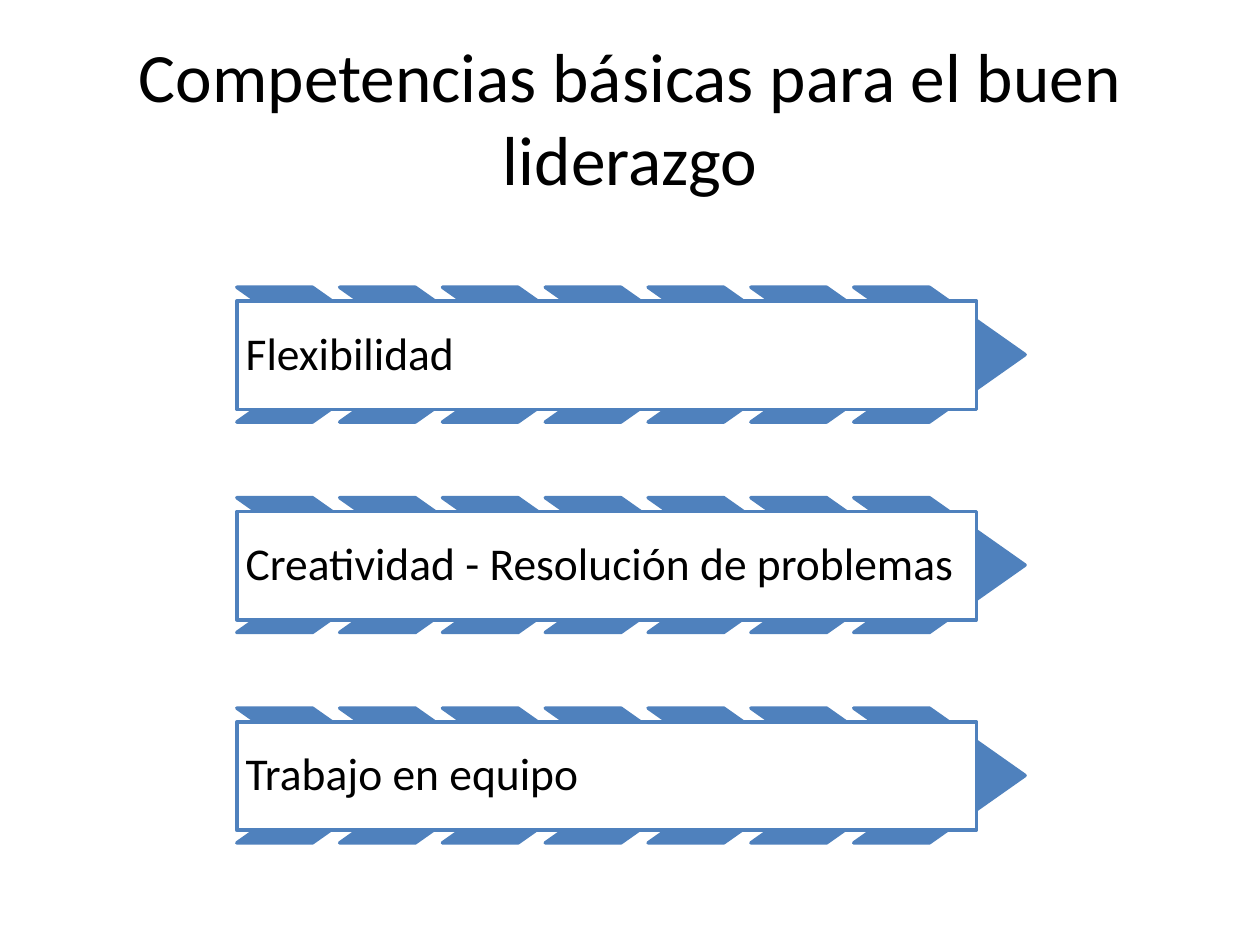
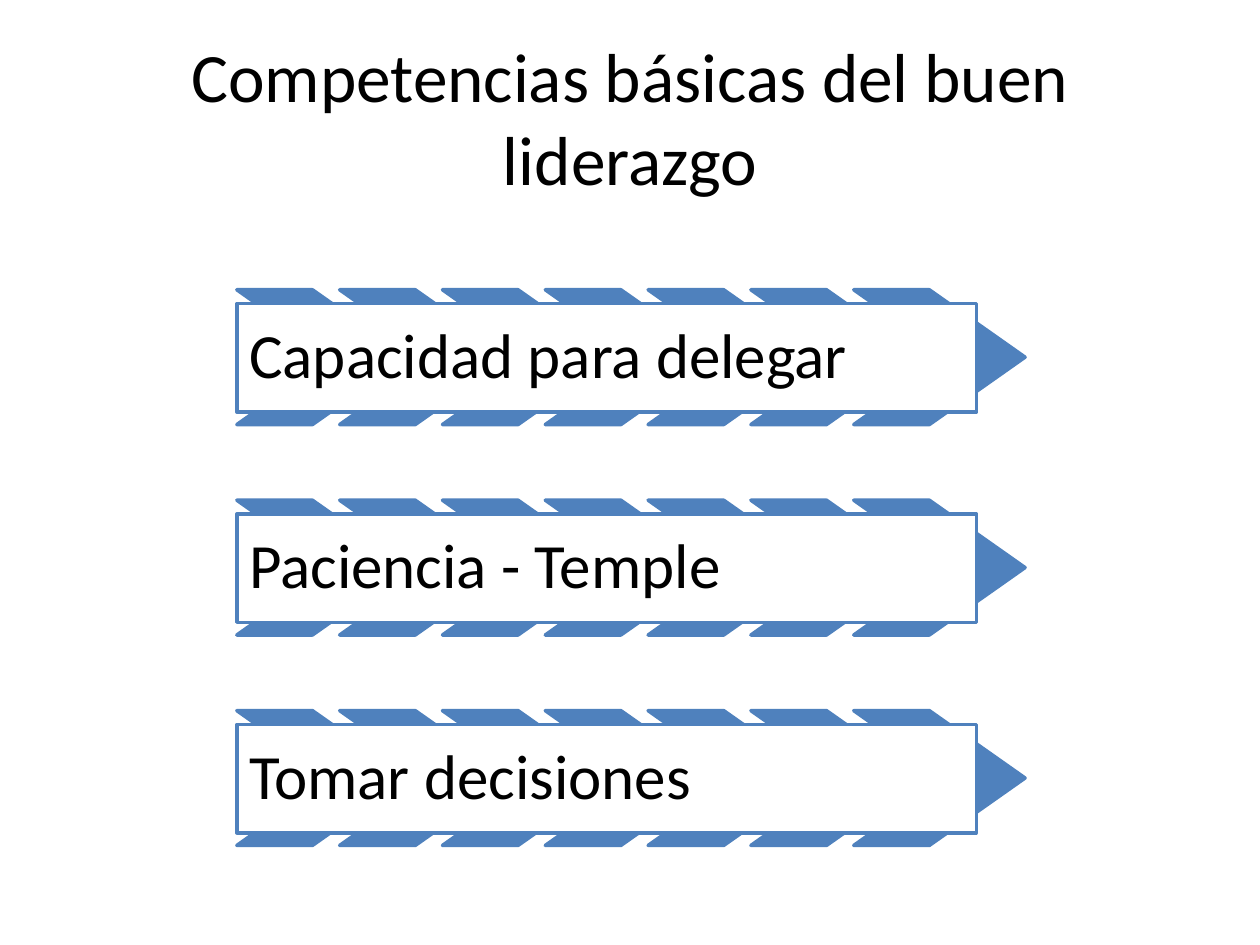
from dataclasses import dataclass

import pptx
import pptx.dml.color
import pptx.enum.shapes
import pptx.enum.text
import pptx.util

Inches = pptx.util.Inches
Pt = pptx.util.Pt
RGB = pptx.dml.color.RGBColor
SHAPE = pptx.enum.shapes.MSO_SHAPE
ALIGN = pptx.enum.text.PP_ALIGN
MIDDLE = pptx.enum.text.MSO_ANCHOR.MIDDLE


@dataclass(frozen=True)
class Theme:
    font: str = "Calibri"
    accent: RGB = RGB(0x4F, 0x81, 0xBD)
    paper: RGB = RGB(0xFF, 0xFF, 0xFF)
    ink: RGB = RGB(0, 0, 0)
    title_size: float = 39.6
    line_width: float = 2


class Deck:
    # Banner geometry, in inches
    LEFT = 1.88
    BANNER_PITCH = 1.67
    CHEVRONS = 7
    CHEVRON_W, CHEVRON_H = 1.36, 1.07
    CHEVRON_PITCH = CHEVRON_W * 0.6
    CHEVRON_ADJ = 0.71
    LABEL_W, LABEL_H = 5.87, 0.86
    LABEL_DROP = 0.11

    def __init__(self, theme):
        self.theme = theme
        self.prs = pptx.Presentation()
        self.prs.slide_width = Inches(10)
        self.prs.slide_height = Inches(7.5)
        self.slide = None

    def add_slide(self, title):
        self.slide = self.prs.slides.add_slide(self.prs.slide_layouts[5])
        sp = self.slide.shapes.title
        sp.left, sp.top = Inches(0.5), Inches(0.3)
        sp.width, sp.height = Inches(9), Inches(1.25)
        self.set_text(sp, title, self.theme.title_size, ALIGN.CENTER)

    def set_text(self, sp, text, size, align):
        tf = sp.text_frame
        tf.text = text
        tf.word_wrap = True
        tf.auto_size = pptx.enum.text.MSO_AUTO_SIZE.NONE
        tf.vertical_anchor = MIDDLE
        p = tf.paragraphs[0]
        p.alignment = align
        p.font.name = self.theme.font
        p.font.size = Pt(size)
        p.font.color.rgb = self.theme.ink
        return tf

    def shape(self, parent, kind, left, top, width, height, fill):
        sp = parent.shapes.add_shape(
            kind, Inches(left), Inches(top), Inches(width), Inches(height))
        sp.shadow.inherit = False
        sp.fill.solid()
        sp.fill.fore_color.rgb = fill
        sp.line.color.rgb = self.theme.accent
        sp.line.width = Pt(self.theme.line_width)
        return sp

    def banner(self, group, text, top, size, inset):
        # Row of chevrons behind the label
        for i in range(self.CHEVRONS):
            sp = self.shape(group, SHAPE.CHEVRON, self.LEFT + i * self.CHEVRON_PITCH,
                            top, self.CHEVRON_W, self.CHEVRON_H, self.theme.accent)
            sp.adjustments[0] = self.CHEVRON_ADJ
        # Label over the chevrons
        sp = self.shape(group, SHAPE.RECTANGLE, self.LEFT, top + self.LABEL_DROP,
                        self.LABEL_W, self.LABEL_H, self.theme.paper)
        tf = self.set_text(sp, text, size, ALIGN.LEFT)
        tf.margin_left = tf.margin_right = Inches(inset)
        tf.margin_top = tf.margin_bottom = Inches(inset)
        tf.paragraphs[0].line_spacing = 0.9

    def banners(self, labels, top, size, inset):
        group = self.slide.shapes.add_group_shape()
        for i, text in enumerate(labels):
            self.banner(group, text, top + i * self.BANNER_PITCH, size, inset)


def main():
    deck = Deck(Theme())

    # Slide 1
    deck.add_slide("Competencias básicas para el buen liderazgo")
    deck.banners(["Flexibilidad", "Creatividad - Resolución de problemas",
                  "Trabajo en equipo"], top=2.28, size=26, inset=0.07)

    # Slide 2
    deck.add_slide("Competencias básicas del buen liderazgo")
    deck.banners(["Capacidad para delegar", "Paciencia - Temple",
                  "Tomar decisiones"], top=2.3, size=36, inset=0.1)

    deck.prs.save("out.pptx")


if __name__ == "__main__":
    main()
